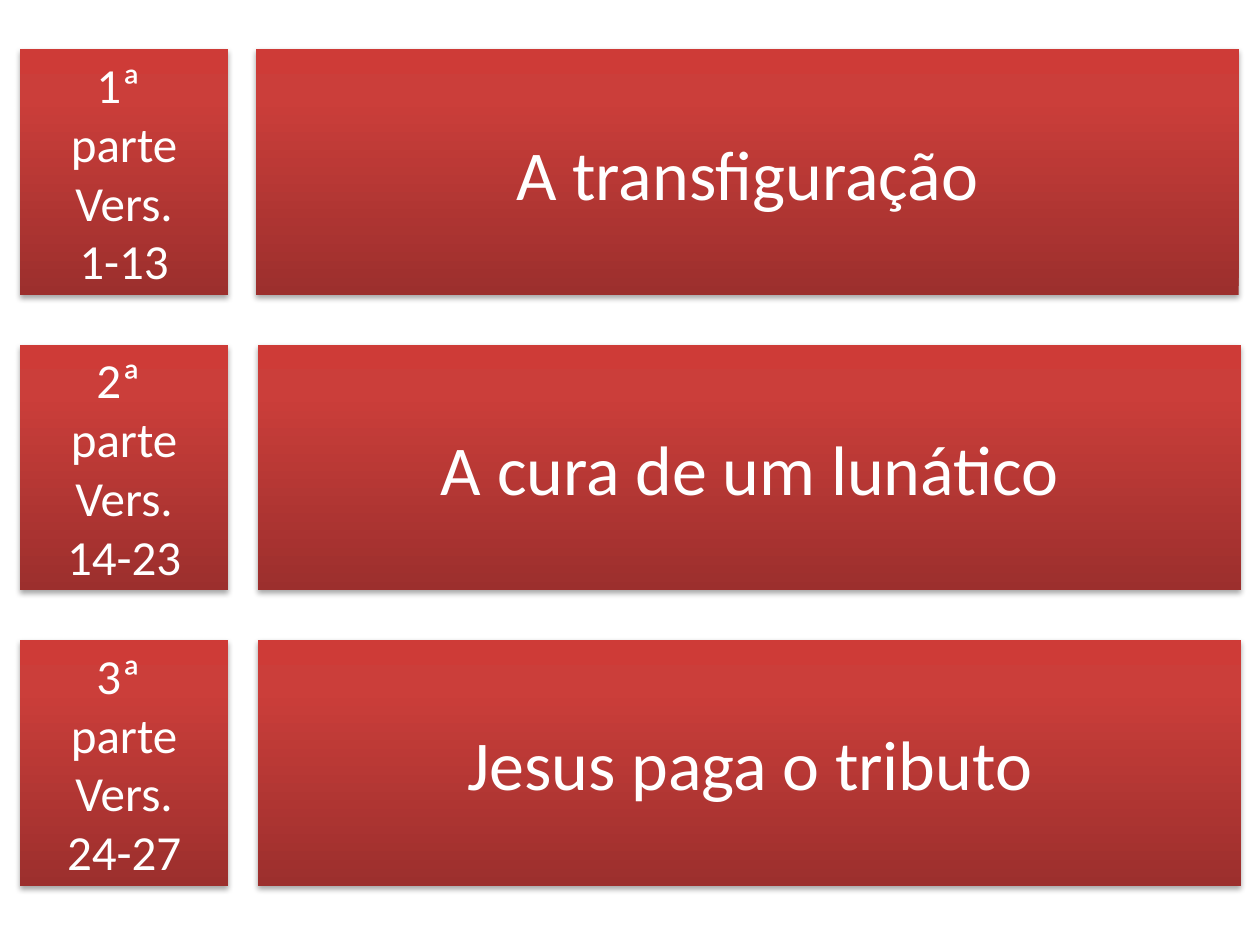
from copy import deepcopy

from lxml import etree
from pptx import Presentation
from pptx.dml.color import RGBColor
from pptx.enum import shapes, text
from pptx.oxml.ns import qn
from pptx.util import Pt

WHITE = RGBColor(0xFF, 0xFF, 0xFF)
GRADIENT = [
    (0, RGBColor(0x9C, 0x2F, 0x2D)),
    (0.8, RGBColor(0xCB, 0x3E, 0x3A)),
    (1, RGBColor(0xCE, 0x3B, 0x37)),
]
FONT = "Calibri"

# verse label, title, left edge of the title panel
PARTS = [
    ("1ª \nparte\nVers.\n1-13", "A transfiguração", 146.2),
    ("2ª \nparte\nVers.\n14-23", "A cura de um lunático", 147.6),
    ("3ª \nparte\nVers.\n24-27", "Jesus paga o tributo", 147.6),
]
LEFT, TOP, ROW_PITCH = 11.5, 28.1, 168.8
LABEL_WIDTH, TITLE_WIDTH, ROW_HEIGHT = 118.8, 561.6, 140.4


def fill_gradient(panel):
    """Shade the panel from dark at the bottom to bright at the top."""
    panel.fill.gradient()
    panel.fill.gradient_angle = 90
    last_stop = panel._element.spPr.findall(".//" + qn("a:gs"))[-1]
    last_stop.addnext(deepcopy(last_stop))
    for stop, (position, color) in zip(panel.fill.gradient_stops, GRADIENT):
        stop.position = position
        stop.color.rgb = color


def add_soft_shadow(panel):
    panel.shadow.inherit = False
    effects = panel._element.spPr.find(qn("a:effectLst"))
    shadow = etree.SubElement(
        effects, qn("a:outerShdw"), blurRad=str(Pt(3.15)), dist=str(Pt(1.8)),
        dir="5400000", rotWithShape="0")
    black = etree.SubElement(shadow, qn("a:srgbClr"), val="000000")
    etree.SubElement(black, qn("a:alpha"), val="35000")


def add_panel(slide, left, top, width, height, wording, size):
    panel = slide.shapes.add_shape(
        shapes.MSO_SHAPE.RECTANGLE, Pt(left), Pt(top), Pt(width), Pt(height))
    fill_gradient(panel)
    panel.line.fill.background()
    add_soft_shadow(panel)
    frame = panel.text_frame
    frame.word_wrap = True
    frame.vertical_anchor = text.MSO_ANCHOR.MIDDLE
    frame.text = wording
    for paragraph in frame.paragraphs:
        paragraph.alignment = text.PP_ALIGN.CENTER
        for run in paragraph.runs:
            run.font.name = FONT
            run.font.size = Pt(size)
            run.font.color.rgb = WHITE


def add_part(slide, left, top, height, label, title, title_left):
    """Place one row: the verse label and the title panel beside it."""
    add_panel(slide, left, top, LABEL_WIDTH, height, label, 28)
    add_panel(slide, title_left, top, TITLE_WIDTH, height, title, 40)


def main():
    prs = Presentation()
    prs.slide_width, prs.slide_height = Pt(720), Pt(540)
    slide = prs.slides.add_slide(prs.slide_layouts[6])
    for row, part in enumerate(PARTS):
        add_part(slide, LEFT, TOP + row * ROW_PITCH, ROW_HEIGHT, *part)
    prs.save("out.pptx")


if __name__ == "__main__":
    main()
